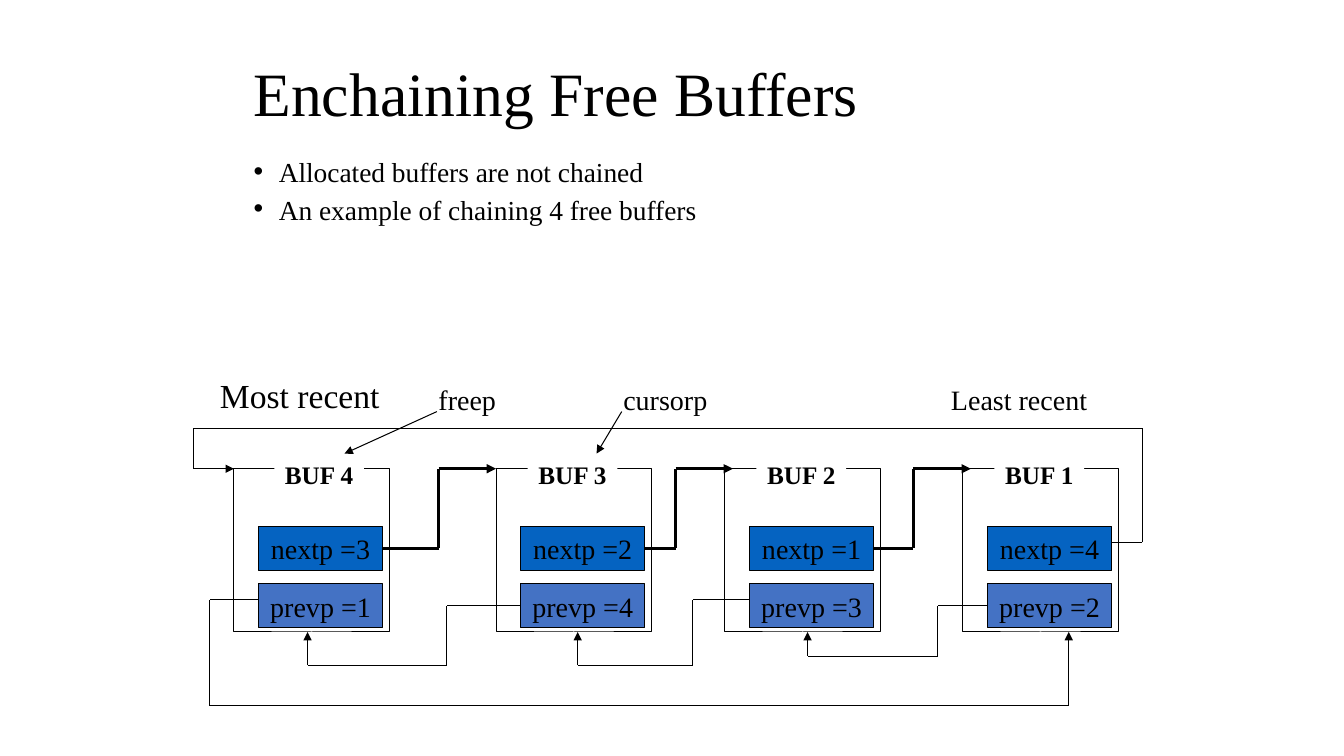
"""Draw the free-buffer chain slide on a grid of 160 columns by 90 rows."""
from itertools import pairwise

from lxml import etree
from pptx import Presentation
from pptx.dml.color import RGBColor
from pptx.enum.shapes import MSO_CONNECTOR as Conn, MSO_SHAPE as Shape
from pptx.enum.text import MSO_ANCHOR as Anchor, PP_ALIGN as Align
from pptx.oxml.ns import qn
from pptx.util import Inches, Pt

CELL = Inches(1) / 12
FONT = "Times New Roman"
BLACK, WHITE, NEXT_BLUE, PREV_BLUE = "000000", "FFFFFF", "0563C1", "4472C4"
FRAME_W, FRAME_H, FRAME_TOP = 18.48, 19.44, 55.8
FRAME_BOTTOM = FRAME_TOP + FRAME_H
FIELD_W, FIELD_H, FIELD_INDENT = 14.76, 5.28, 2.94
NEXT_TOP, PREV_TOP = 62.64, 69.48
NEXT_MID, PREV_MID = NEXT_TOP + FIELD_H / 2, PREV_TOP + FIELD_H / 2
LEFT_SIDE, RIGHT_SIDE = 1, 3

# number, frame left, label indent, nextp, prevp, prevp exit row, turn column, floor row, tip column
BUFFERS = [
    (4, 27.84, 4.8, 3, 1, 71.4, 24.96, 84, 127.2),
    (3, 59.04, 3.75, 2, 4, PREV_MID, 53.16, 79.2, 36.6),
    (2, 86.28, 3.75, 1, 3, 71.4, 82.44, 79.2, 68.76),
    (1, 114.6, 3.75, 4, 2, PREV_MID, 111.6, 78.12, 96.12),
]
NEXT_TIPS = [59.04, 87.24, 115.56]


def grid(*cells):
    """Turn grid cells into slide lengths."""
    return [round(c * CELL) for c in cells]


def color(hex_text):
    """Give the colour for a hex string."""
    return RGBColor.from_string(hex_text)


def add_run(p, text, size, bold=False):
    """Add one black run to a paragraph."""
    r = p.add_run()
    r.text = text
    r.font.name, r.font.size, r.font.bold = FONT, Pt(size), bold
    r.font.color.rgb = color(BLACK)


def add_box(s, x, y, w, h, fill, text="", size=20, bold=False, outlined=True):
    """Add a filled rectangle with optional centred text."""
    sp = s.shapes.add_shape(Shape.RECTANGLE, *grid(x, y, w, h))
    sp.shadow.inherit = False
    sp.fill.solid()
    sp.fill.fore_color.rgb = color(fill)
    if outlined:
        sp.line.color.rgb = color(BLACK)
        sp.line.width = Pt(0.75)
    else:
        sp.line.fill.background()
    if text:
        tf = sp.text_frame
        tf.margin_left = tf.margin_right = 0
        p = tf.paragraphs[0]
        p.alignment = Align.CENTER
        add_run(p, text, size, bold)
    return sp


def add_text(s, x, y, w, h, lines, size, wrap=False, anchor=Anchor.TOP, spacing=None, bullets=False):
    """Add a text box with one paragraph per line."""
    tf = s.shapes.add_textbox(*grid(x, y, w, h)).text_frame
    tf.word_wrap, tf.vertical_anchor = wrap, anchor
    for i, line in enumerate(lines):
        p = tf.add_paragraph() if i else tf.paragraphs[0]
        p.line_spacing = spacing
        if bullets:
            p.space_before = Pt(10)
            add_bullet(p)
        add_run(p, line, size)


def add_bullet(p):
    """Give a paragraph a hanging round bullet."""
    ppr = p._p.get_or_add_pPr()
    ppr.set("marL", str(Inches(0.25)))
    ppr.set("indent", str(-Inches(0.25)))
    etree.SubElement(ppr, qn("a:buFont"), typeface="Arial")
    etree.SubElement(ppr, qn("a:buChar"), char="•")


def add_line(s, start, end, width, arrow):
    """Add a straight line, with an arrowhead at its end if asked."""
    cn = s.shapes.add_connector(Conn.STRAIGHT, *grid(*start, *end))
    cn.line.color.rgb = color(BLACK)
    cn.line.width = Pt(width)
    if arrow:
        etree.SubElement(cn.line._get_or_add_ln(), qn("a:tailEnd"), type="triangle")
    etree.SubElement(cn._element.spPr, qn("a:effectLst"))
    return cn


def add_path(s, points, width=0.75, box=None, side=None):
    """Add a run of lines ending in an arrowhead, joined to a box at its start if given."""
    legs = list(pairwise(points))
    lines = [add_line(s, a, b, width, i == len(legs)) for i, (a, b) in enumerate(legs, 1)]
    if box is not None:
        lines[0].begin_connect(box, side)


def add_buffer(s, number, left, label_indent, nextp, prevp):
    """Add one buffer with its label and pointer fields, and return the fields."""
    add_box(s, left, FRAME_TOP, FRAME_W, FRAME_H, WHITE)
    add_box(s, left + label_indent, 54.12, 10.68, 4.8, WHITE, f"BUF {number}", 18, True, False)
    x = left + FIELD_INDENT
    return (add_box(s, x, NEXT_TOP, FIELD_W, FIELD_H, NEXT_BLUE, f"nextp ={nextp}"),
            add_box(s, x, PREV_TOP, FIELD_W, FIELD_H, PREV_BLUE, f"prevp ={prevp}"))


def add_chain(s):
    """Add all buffers and the links between them."""
    fields = [add_buffer(s, *buffer[:5]) for buffer in BUFFERS]
    for (_, left, *_, row, turn, floor, tip), (_, prev_box) in zip(BUFFERS, fields):
        points = [(left + FIELD_INDENT, row), (turn, row), (turn, floor), (tip, floor), (tip, FRAME_BOTTOM)]
        add_path(s, points, box=prev_box if row == PREV_MID else None, side=LEFT_SIDE)
    rights = [buffer[1] + FIELD_INDENT + FIELD_W for buffer in BUFFERS]
    for right, tip, (next_box, _) in zip(rights, NEXT_TIPS, fields):
        turn = tip - 6.84
        points = [(right, NEXT_MID), (turn, NEXT_MID), (turn, FRAME_TOP), (tip, FRAME_TOP)]
        add_path(s, points, 2.25, next_box, RIGHT_SIDE)
    add_path(s, [(rights[-1], 64.56), (135.96, 64.56), (135.96, 51), (23.04, 51),
                 (23.04, FRAME_TOP), (BUFFERS[0][1], FRAME_TOP)])


def main():
    """Build and save the slide."""
    prs = Presentation()
    prs.slide_width, prs.slide_height = Inches(13.33), Inches(7.5)
    s = prs.slides.add_slide(prs.slide_layouts[6])
    add_text(s, 29, 4, 102, 15, ["Enchaining Free Buffers"], 44, True, Anchor.MIDDLE, 0.9)
    add_text(s, 29, 19, 98, 9, ["Allocated buffers are not chained", "An example of chaining 4 free buffers"],
             19.6, True, spacing=0.7, bullets=True)
    add_chain(s)
    add_text(s, 25, 44, 23, 6, ["Most recent"], 24)
    for x, w, text in [(112, 20, "Least recent"), (51, 10, "freep"), (73, 13, "cursorp")]:
        add_text(s, x, 45, w, 5.2, [text], 20)
    for start, tip in [(52, 41), (74, 71)]:
        add_path(s, [(start, 49), (tip, 54)])
    prs.save("out.pptx")


if __name__ == "__main__":
    main()
